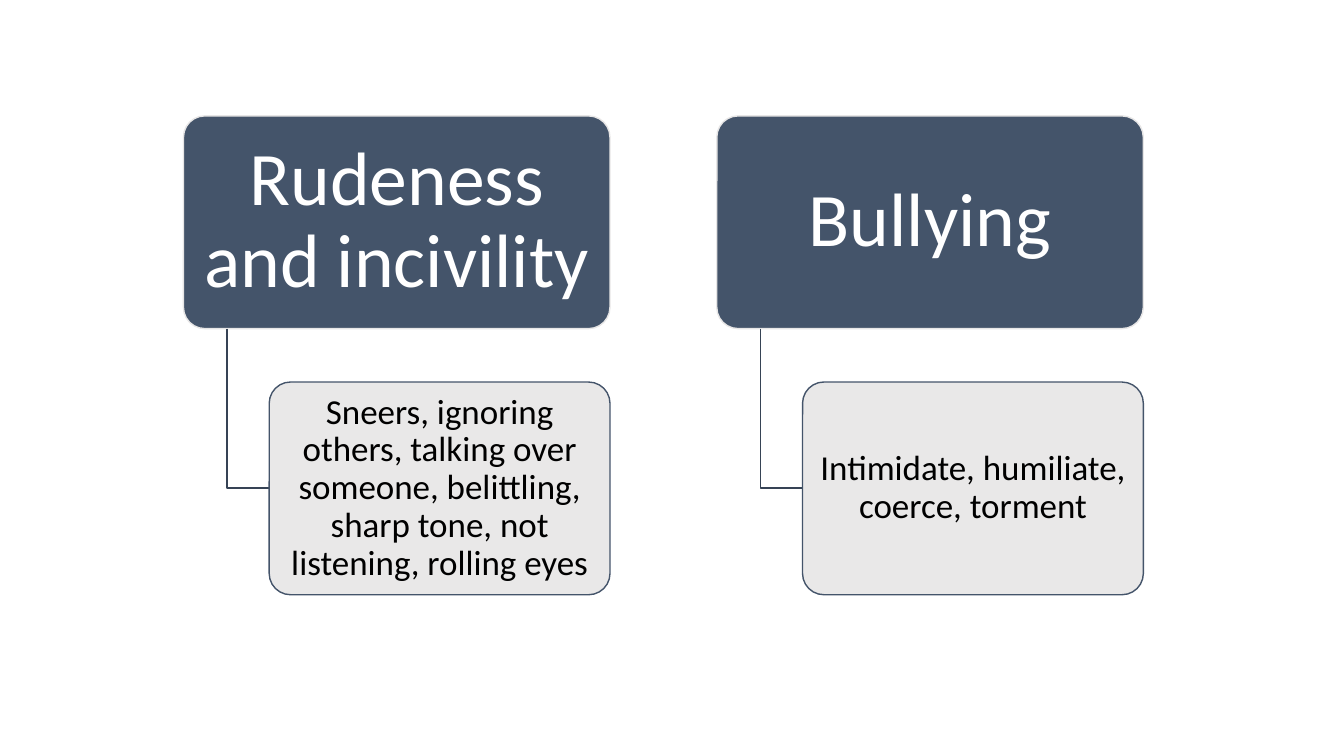
import pptx
import pptx.dml.color
import pptx.enum.shapes
import pptx.enum.text
import pptx.oxml.ns
import pptx.util
from lxml import etree

PX = 9144  # EMU per px, 100 px to the inch

# Layout
COLUMN_LEFTS = (182, 711)
HEADING_TOP, DETAIL_TOP = 115, 379
HEADING_WIDTH, DETAIL_WIDTH, BOX_HEIGHT = 423, 338, 211
BRANCH_INDENT = 43
DETAIL_INDENT = HEADING_WIDTH - DETAIL_WIDTH

# Colours
NAVY, DARK_NAVY, PALE = "44546A", "364355", "E7E6E6"

COLUMNS = (
    ("Rudeness and incivility",
     "Sneers, ignoring others, talking over someone, belittling, "
     "sharp tone, not listening, rolling eyes"),
    ("Bullying", "Intimidate, humiliate, coerce, torment"),
)


def color(value):
    return pptx.dml.color.RGBColor.from_string(value)


def set_line(shape, value):
    shape.shadow.inherit = False
    shape.line.color.rgb = color(value)
    shape.line.width = pptx.util.Pt(1)


def set_text(shape, text, *, size, text_color, inset_x, inset_y):
    frame = shape.text_frame
    frame.word_wrap = True
    frame.vertical_anchor = pptx.enum.text.MSO_ANCHOR.MIDDLE
    frame.margin_left = frame.margin_right = inset_x * PX
    frame.margin_top = frame.margin_bottom = inset_y * PX
    paragraph = frame.paragraphs[0]
    paragraph.alignment = pptx.enum.text.PP_ALIGN.CENTER
    paragraph.line_spacing = 0.9
    run = paragraph.add_run()
    run.text = text
    run.font.name = "Calibri"
    run.font.size = pptx.util.Pt(size)
    run.font.color.rgb = color(text_color)


def add_box(slide, left, top, width, text, *, fill, line, opacity=100, **text_format):
    shape = slide.shapes.add_shape(
        pptx.enum.shapes.MSO_SHAPE.ROUNDED_RECTANGLE,
        left * PX, top * PX, width * PX, BOX_HEIGHT * PX)
    shape.adjustments[0] = 0.1
    shape.fill.solid()
    shape.fill.fore_color.rgb = color(fill)
    if opacity < 100:
        fill_color = shape.fill._xPr.find(".//" + pptx.oxml.ns.qn("a:srgbClr"))
        alpha = etree.SubElement(fill_color, pptx.oxml.ns.qn("a:alpha"))
        alpha.set("val", str(opacity * 1000))
    set_line(shape, line)
    set_text(shape, text, **text_format)


def add_branch(slide, left):
    """Draw the elbow from a heading's lower edge to its detail box."""
    start_x, start_y = left + BRANCH_INDENT, HEADING_TOP + BOX_HEIGHT
    middle = DETAIL_TOP + BOX_HEIGHT // 2
    builder = slide.shapes.build_freeform(start_x, start_y, scale=PX)
    builder.add_line_segments(
        [(start_x, middle), (left + DETAIL_INDENT, middle)], close=False)
    branch = builder.convert_to_shape()
    branch.fill.background()
    set_line(branch, DARK_NAVY)


def add_column(slide, left, heading, detail):
    add_box(slide, left, HEADING_TOP, HEADING_WIDTH, heading, fill=NAVY, line=PALE,
            size=54, text_color="FFFFFF", inset_x=11, inset_y=7)
    add_branch(slide, left)
    add_box(slide, left + DETAIL_INDENT, DETAIL_TOP, DETAIL_WIDTH, detail,
            fill=PALE, line=NAVY, opacity=90,
            size=25, text_color="000000", inset_x=5, inset_y=3)


def main():
    presentation = pptx.Presentation()
    presentation.slide_width = 1333 * PX
    presentation.slide_height = 750 * PX
    slide = presentation.slides.add_slide(presentation.slide_layouts[6])

    # One heading, branch and detail box per column
    for left, (heading, detail) in zip(COLUMN_LEFTS, COLUMNS):
        add_column(slide, left, heading, detail)

    presentation.save("out.pptx")


if __name__ == "__main__":
    main()
